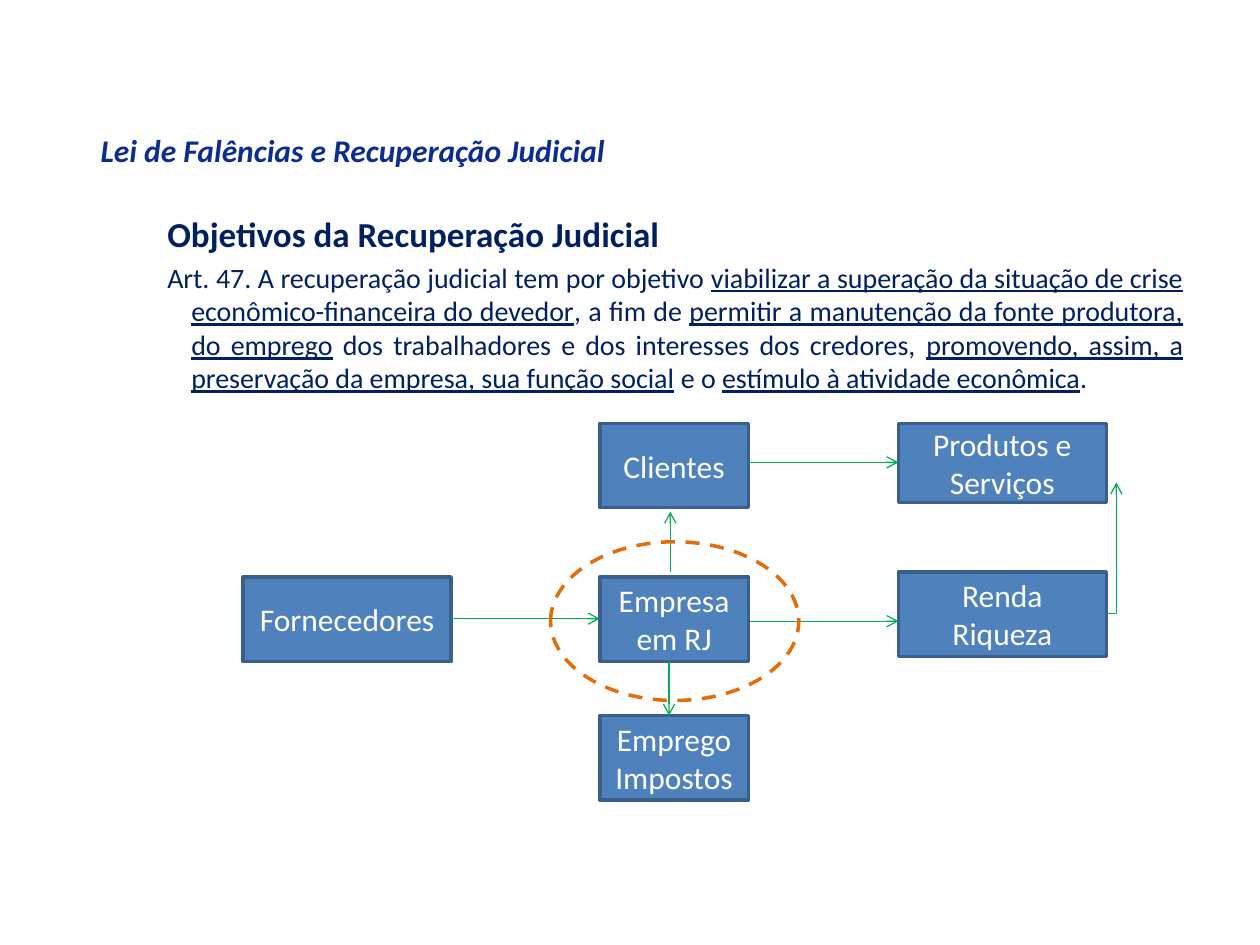
from dataclasses import dataclass

from lxml import etree
from pptx import Presentation
from pptx.dml.color import RGBColor
from pptx.enum.dml import MSO_LINE
from pptx.enum.shapes import MSO_CONNECTOR, MSO_SHAPE
from pptx.enum.text import MSO_ANCHOR, PP_ALIGN
from pptx.oxml.ns import qn
from pptx.util import Inches, Pt

PROCESS, OVAL = MSO_SHAPE.FLOWCHART_PROCESS, MSO_SHAPE.OVAL
STRAIGHT, ELBOW = MSO_CONNECTOR.STRAIGHT, MSO_CONNECTOR.ELBOW
CENTER, JUSTIFY = PP_ALIGN.CENTER, PP_ALIGN.JUSTIFY
MIDDLE, DASH = MSO_ANCHOR.MIDDLE, MSO_LINE.DASH


@dataclass(frozen=True)
class Theme:
    font: str = "Calibri"
    title: str = "0C2D8F"
    body: str = "002060"
    box: str = "4F81BD"
    border: str = "3A5F8C"
    arrow: str = "00B050"
    highlight: str = "E46C0A"
    white: str = "FFFFFF"
    heading_size: int = 20
    label_size: int = 18
    body_size: int = 16
    border_width: float = 2
    arrow_width: float = 0.75


def add_run(paragraph, text, *, font, size, color, **flags):
    run = paragraph.add_run()
    run.text = text
    run.font.name = font
    run.font.size = Pt(size)
    run.font.color.rgb = RGBColor.from_string(color)
    for flag, value in flags.items():
        setattr(run.font, flag, value)


class FlowSlide:
    """Draws the parts of a flow slide in one theme."""

    def __init__(self, slide, theme):
        self.shapes = slide.shapes
        self.theme = theme

    def text_frame(self, left, top, width, height):
        box = self.shapes.add_textbox(*map(Inches, (left, top, width, height)))
        box.text_frame.word_wrap = True
        return box.text_frame

    def title(self, text, *place):
        theme = self.theme
        add_run(self.text_frame(*place).paragraphs[0], text, font=theme.font,
                size=theme.label_size, color=theme.title, bold=True, italic=True)

    def article(self, heading, passages, *place):
        theme = self.theme
        frame = self.text_frame(*place)
        heading_line, clause = frame.paragraphs[0], frame.add_paragraph()
        for paragraph, size in ((heading_line, theme.heading_size), (clause, theme.body_size)):
            paragraph.alignment = JUSTIFY
            paragraph.level = 2
            paragraph.space_before = Pt(size * 0.2)
            properties = paragraph._p.get_or_add_pPr()
            properties.set("marL", str(Inches(0.99)))
            properties.set("indent", str(Inches(-0.19)))
        heading_line.line_spacing = 1.5
        add_run(heading_line, heading, font=theme.font, size=theme.heading_size,
                color=theme.body, bold=True)
        for position, passage in enumerate(passages):
            add_run(clause, passage, font=theme.font, size=theme.body_size,
                    color=theme.body, underline=position % 2 == 1)

    def outline(self, kind, color, left, top, width, height):
        shape = self.shapes.add_shape(kind, *map(Inches, (left, top, width, height)))
        shape.shadow.inherit = False
        shape.line.color.rgb = RGBColor.from_string(color)
        shape.line.width = Pt(self.theme.border_width)
        return shape

    def process(self, lines, *place):
        theme = self.theme
        shape = self.outline(PROCESS, theme.border, *place)
        shape.fill.solid()
        shape.fill.fore_color.rgb = RGBColor.from_string(theme.box)
        frame = shape.text_frame
        frame.word_wrap = True
        frame.vertical_anchor = MIDDLE
        frame.margin_left = frame.margin_right = Inches(0.1)
        for position, line in enumerate(lines):
            paragraph = frame.add_paragraph() if position else frame.paragraphs[0]
            paragraph.alignment = CENTER
            add_run(paragraph, line, font=theme.font, size=theme.label_size, color=theme.white)

    def highlight(self, *place):
        ring = self.outline(OVAL, self.theme.highlight, *place)
        ring.fill.background()
        ring.line.dash_style = DASH

    def arrow(self, start, end, kind=STRAIGHT):
        connector = self.shapes.add_connector(kind, *map(Inches, (*start, *end)))
        connector.line.color.rgb = RGBColor.from_string(self.theme.arrow)
        connector.line.width = Pt(self.theme.arrow_width)
        properties = connector._element.spPr
        if kind == ELBOW:
            properties.find(qn("a:prstGeom")).set("prst", "bentConnector2")
        etree.SubElement(properties.find(qn("a:ln")), qn("a:tailEnd"), type="arrow")
        etree.SubElement(properties, qn("a:effectLst"))


def main():
    deck = Presentation()
    deck.slide_width, deck.slide_height = Inches(10), Inches(7.5)
    flow = FlowSlide(deck.slides.add_slide(deck.slide_layouts[6]), Theme())

    flow.title("Lei de Falências e Recuperação Judicial", 0.7, 0.99, 8.55, 0.4)
    flow.article(
        "Objetivos da Recuperação Judicial",
        (
            "Art. 47. A recuperação judicial tem por objetivo ",
            "viabilizar a superação da situação de crise econômico-financeira do devedor",
            ", a fim de ",
            "permitir a manutenção da fonte produtora, do emprego",
            " dos trabalhadores e dos interesses dos credores, ",
            "promovendo, assim, a preservação da empresa, sua função social",
            " e o ",
            "estímulo à atividade econômica",
            ".",
        ),
        0.43, 1.47, 9.06, 1.81,
    )

    suppliers_left, company_left, results_left = 1.93, 4.76, 7.13
    narrow, wide, tall = 1.18, 1.65, 0.67
    clients_top, company_top, jobs_top = 3.36, 4.58, 5.68
    suppliers_right = suppliers_left + wide
    company_right = company_left + narrow
    results_right = results_left + wide

    flow.process(["Clientes"], company_left, clients_top, narrow, tall)
    flow.process(["Fornecedores"], suppliers_left, company_top, wide, tall)
    flow.process(["Produtos e Serviços"], results_left, clients_top, wide, 0.63)
    flow.process(["Emprego", "Impostos"], company_left, jobs_top, narrow, tall)
    flow.process(["Renda", "Riqueza"], results_left, 4.54, wide, tall)

    flow.arrow((suppliers_right, 4.91), (company_left, 4.91))
    flow.arrow((5.32, 4.54), (5.32, 4.06))
    for height in (3.67, 4.93):
        flow.arrow((company_right, height), (results_left, height))
    flow.highlight(4.37, 4.3, 1.97, 1.26)
    flow.arrow((results_right, 4.87), (8.86, 3.83), ELBOW)
    flow.process(["Empresa em RJ"], company_left, company_top, narrow, tall)
    flow.arrow((5.31, company_top + tall), (5.31, jobs_top))

    deck.save("out.pptx")


if __name__ == "__main__":
    main()
